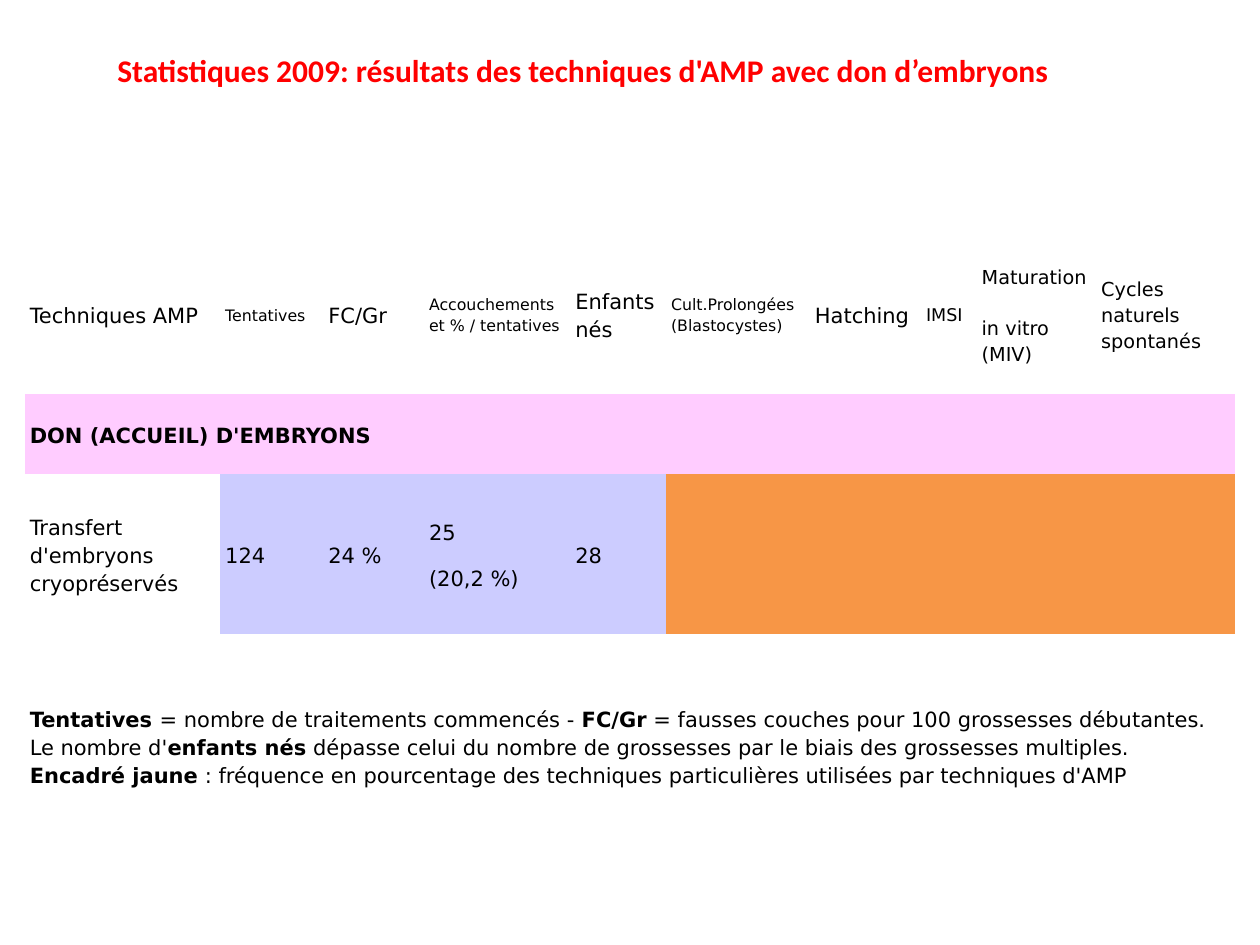
from pptx import Presentation
from pptx.dml.color import RGBColor
from pptx.enum.text import MSO_ANCHOR, PP_ALIGN
from pptx.oxml.ns import qn
from pptx.util import Cm, Pt

# Content: "**" toggles bold, "\n" breaks a line, list items are paragraphs
TITLE = "Statistiques 2009: résultats des techniques d'AMP avec don d’embryons"
HEADERS = [  # paragraphs, type size, column width in cm
    (["Techniques AMP"], 12, 3.94),
    (["Tentatives"], 9, 2.08),
    (["FC/Gr"], 12, 2.03),
    (["Accouchements\net % / tentatives"], 9, 2.95),
    (["Enfants nés"], 12, 1.93),
    (["Cult.Prolongées\n(Blastocystes)"], 9, 2.9),
    (["Hatching"], 12, 2.24),
    (["IMSI"], 10, 1.12),
    (["Maturation", "in vitro (MIV)"], 11, 2.41),
    (["Cycles naturels\nspontanés"], 11, 2.79),
]
SECTION = ["**DON (ACCUEIL) D'EMBRYONS**"]
RESULTS = [["Transfert d'embryons\ncryopréservés"], ["124"], ["24 %"],
           ["25", "(20,2 %)"], ["28"]]
NOTES = [
    "**Tentatives **= nombre de traitements commencés - **FC/Gr** = fausses "
    "couches pour 100 grossesses débutantes.\n"
    "Le nombre d'**enfants nés** dépasse celui du nombre de grossesses "
    "par le biais des grossesses multiples.\n"
    "**Encadré jaune** : fréquence en pourcentage des techniques "
    "particulières utilisées par techniques d'AMP"
]
ROW_HEIGHTS = [3.23, 1.61, 3.23, 4.52]
NO_STYLE = "{2D5ABB26-0587-4C30-8999-92F81FD0307C}"

THEME = {
    "title_font": "Calibri", "title_size": 18, "title": "FF0000",
    "font": "DejaVu Sans", "size": 12, "text": "000000",
    "section": "FFCCFF", "result": "CCCCFF", "technique": "F79646",
    "gap": 10, "wide_gap": 14.5,
}


def set_all(target, values):
    for name, value in values.items():
        setattr(target, name, value)


def style_font(font, name, size, color, bold):
    set_all(font, {"name": name, "size": Pt(size), "bold": bold})
    font.color.rgb = RGBColor.from_string(color)


def write_para(para, text, size, gap):
    set_all(para, {"line_spacing": 1.15, "space_after": Pt(gap),
                   "alignment": PP_ALIGN.LEFT})
    for part, piece in enumerate(text.split("**")):
        for number, line in enumerate(piece.split("\n")):
            if number:
                para.add_line_break()
            if line:
                span = para.add_run()
                span.text = line
                style_font(span.font, THEME["font"], size, THEME["text"],
                           part % 2 == 1)


def fill_cell(cell, paragraphs, size=THEME["size"], color=None,
              gap=THEME["gap"]):
    set_all(cell, {"vertical_anchor": MSO_ANCHOR.MIDDLE,
                   "margin_left": Cm(0.1), "margin_right": Cm(0.1),
                   "margin_top": Cm(0.1), "margin_bottom": Cm(0.1)})
    if color:
        cell.fill.solid()
        cell.fill.fore_color.rgb = RGBColor.from_string(color)
    else:
        cell.fill.background()
    frame = cell.text_frame
    for number, text in enumerate(paragraphs):
        para = frame.add_paragraph() if number else frame.paragraphs[0]
        write_para(para, text, size, gap)


def add_title(page):
    title = page.shapes.title
    set_all(title, {"left": Cm(2.11), "top": Cm(0.91),
                    "width": Cm(22.6), "height": Cm(1.03)})
    frame = title.text_frame
    set_all(frame, {"word_wrap": True, "vertical_anchor": MSO_ANCHOR.TOP})
    para = frame.paragraphs[0]
    para.alignment = PP_ALIGN.LEFT
    span = para.add_run()
    span.text = TITLE
    style_font(span.font, THEME["title_font"], THEME["title_size"],
               THEME["title"], True)


def add_results_table(page):
    widths = [width for _, _, width in HEADERS]
    table = page.shapes.add_table(
        len(ROW_HEIGHTS), len(widths), Cm(0.5), Cm(4.72),
        Cm(sum(widths)), Cm(sum(ROW_HEIGHTS))).table
    set_all(table, {"first_row": False, "horz_banding": False})
    table._tbl.tblPr.find(qn("a:tableStyleId")).text = NO_STYLE
    for column, width in zip(table.columns, widths):
        column.width = Cm(width)
    for row, height in zip(table.rows, ROW_HEIGHTS):
        row.height = Cm(height)

    # Header row
    for column, (paragraphs, size, _) in enumerate(HEADERS):
        fill_cell(table.cell(0, column), paragraphs, size,
                  gap=THEME["wide_gap"] if len(paragraphs) > 1
                  else THEME["gap"])

    # Full-width section and notes rows
    for row, paragraphs, color in ((1, SECTION, THEME["section"]),
                                   (3, NOTES, None)):
        table.cell(row, 0).merge(table.cell(row, len(widths) - 1))
        fill_cell(table.cell(row, 0), paragraphs, color=color)

    # Results, then the empty technique cells
    for column in range(len(widths)):
        if column < len(RESULTS):
            fill_cell(table.cell(2, column), RESULTS[column],
                      color=THEME["result"] if column else None)
        else:
            fill_cell(table.cell(2, column), [], color=THEME["technique"])


def main():
    deck = Presentation()
    set_all(deck, {"slide_width": Cm(25.4), "slide_height": Cm(19.05)})
    page = deck.slides.add_slide(deck.slide_layouts[5])
    add_results_table(page)
    add_title(page)
    deck.save("out.pptx")


if __name__ == "__main__":
    main()
